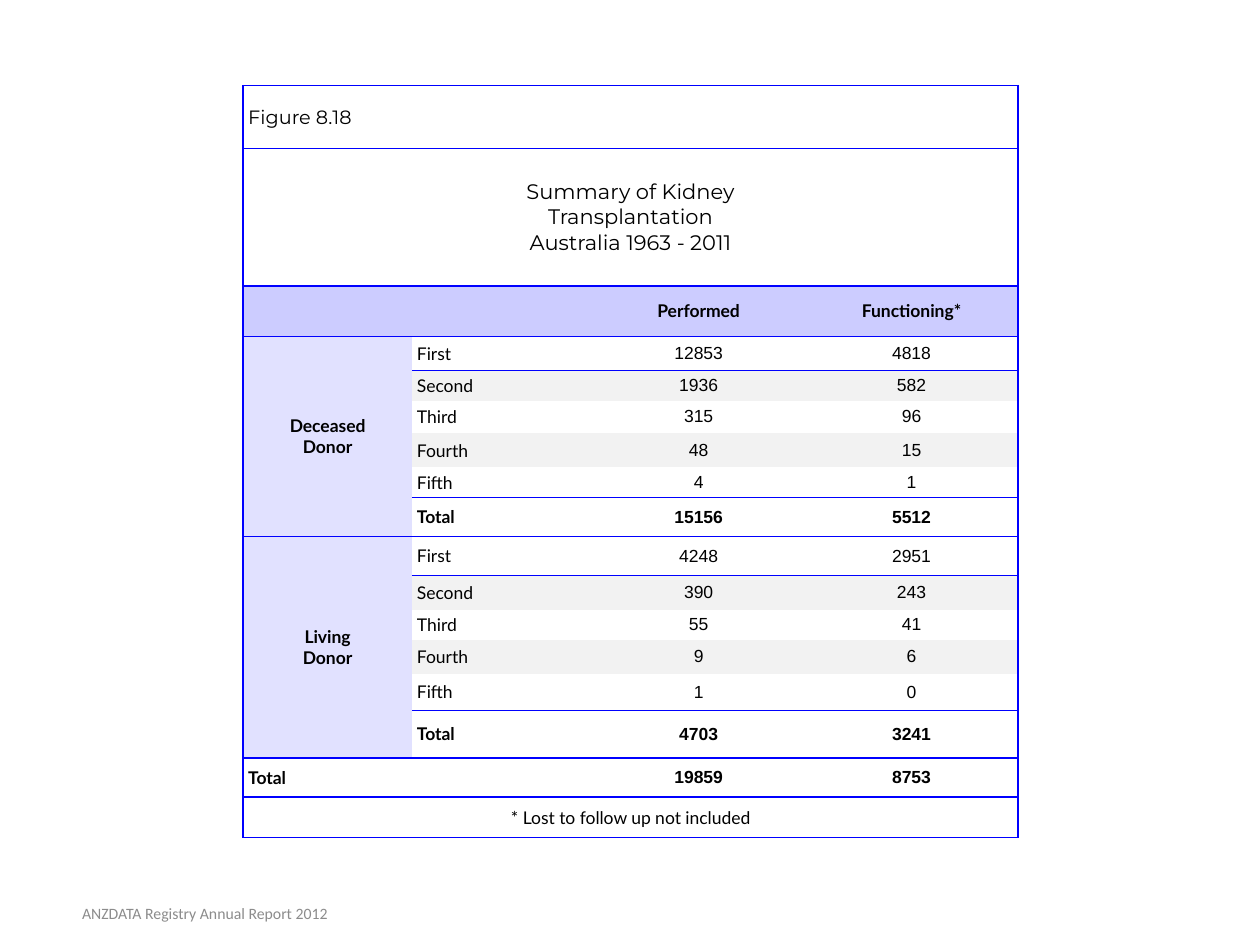
from dataclasses import dataclass
from typing import NamedTuple

from lxml.etree import SubElement
from pptx import Presentation
from pptx.dml.color import RGBColor
from pptx.enum.text import MSO_ANCHOR as Anchor, PP_ALIGN as Align
from pptx.oxml.ns import qn
from pptx.util import Inches, Pt


@dataclass(frozen=True)
class Theme:
    ink: str = "000000"
    rule: str = "0000FF"
    header: str = "CCCCFF"
    donor: str = "E1E1FF"
    band: str = "F2F2F2"
    footer: str = "8C8C8C"
    heading_font: str = "Montserrat"
    label_font: str = "Lato"
    number_font: str = "Arial"
    footer_font: str = "Calibri"
    figure_size: float = 11
    title_size: float = 12
    body_size: float = 10
    footer_size: float = 9


class Style(NamedTuple):
    font: str
    size: float
    bold: bool = False
    align: Align = Align.CENTER
    color: str = Theme.ink


class Graft(NamedTuple):
    label: str
    performed: int
    functioning: int
    height: float


class Donor(NamedTuple):
    name: str
    first_row: int
    grafts: list[Graft]


class Rule(NamedTuple):
    width: float
    first_col: int = 0


T = Theme()
LEFT, TOP = 1.93, 0.68
COLS = [1.34, 1.43, 1.69, 1.69]
FIGURE, TITLE, HEADER = 0, 1, 2
TOTAL, NOTE = 15, 16
NO_STYLE_NO_GRID = "{2D5ABB26-0587-4C30-8999-92F81FD0307C}"

DONORS = [
    Donor("Deceased\nDonor", 3, [
        Graft("First", 12853, 4818, 0.27),
        Graft("Second", 1936, 582, 0.24),
        Graft("Third", 315, 96, 0.26),
        Graft("Fourth", 48, 15, 0.27),
        Graft("Fifth", 4, 1, 0.24),
        Graft("Total", 15156, 5512, 0.31),
    ]),
    Donor("Living\nDonor", 9, [
        Graft("First", 4248, 2951, 0.31),
        Graft("Second", 390, 243, 0.27),
        Graft("Third", 55, 41, 0.24),
        Graft("Fourth", 9, 6, 0.27),
        Graft("Fifth", 1, 0, 0.29),
        Graft("Total", 4703, 3241, 0.38),
    ]),
]
HEIGHTS = [0.5, 1.09, 0.4, *(g.height for d in DONORS for g in d.grafts), 0.31, 0.32]

# Horizontal rules, keyed by the row they lie above
RULES = {row: Rule(1) for row in (0, 1, 2, 3, 9, 15, 16, 17)}
RULES |= {row: Rule(0.75, first_col=1) for row in (8, 14)}


def write(tf, text: str, style: Style) -> None:
    tf.text = text
    for p in tf.paragraphs:
        p.alignment = style.align
        for r in p.runs:
            r.font.name, r.font.size, r.font.bold = style.font, Pt(style.size), style.bold
            r.font.color.rgb = RGBColor.from_string(style.color)


def write_row(table, row: int, label_col: int, graft: Graft, bold: bool) -> None:
    label = Style(T.label_font, T.body_size, bold, Align.LEFT)
    number = Style(T.number_font, T.body_size, bold)
    write(table.cell(row, label_col).text_frame, graft.label, label)
    write(table.cell(row, 2).text_frame, str(graft.performed), number)
    write(table.cell(row, 3).text_frame, str(graft.functioning), number)


def add_border(cell, side: str, width: float) -> None:
    ln = SubElement(cell._tc.get_or_add_tcPr(), qn(f"a:ln{side}"), w=str(Pt(width)))
    fill = SubElement(ln, qn("a:solidFill"))
    SubElement(fill, qn("a:srgbClr"), val=T.rule)


def draw_borders(cell, row: int, col: int) -> None:
    """Add borders in the schema order: left, right, top, bottom."""
    if col == 0:
        add_border(cell, "L", 1)
    if col + cell.span_width == len(COLS):
        add_border(cell, "R", 1)
    for side, edge in (("T", row), ("B", row + cell.span_height)):
        rule = RULES.get(edge)
        if rule and col >= rule.first_col:
            add_border(cell, side, rule.width)


def fill_color(row: int, col: int) -> str | None:
    if row == HEADER:
        return T.header
    for donor in DONORS:
        index = row - donor.first_row
        if 0 <= index < len(donor.grafts):
            if col == 0:
                return T.donor
            return T.band if index in (1, 3) else None
    return None


def format_cell(cell, row: int, col: int) -> None:
    cell.vertical_anchor = Anchor.MIDDLE
    cell.margin_left = cell.margin_right = Inches(0.04)
    pad = {FIGURE: 0.02, HEADER: 0.04}.get(row, 0.01)
    cell.margin_top = cell.margin_bottom = Inches(pad)
    if not cell.text_frame.text:
        # Keeps an empty cell from stretching its row
        end = cell.text_frame.paragraphs[0]._p.get_or_add_endParaRPr()
        end.set("sz", str(int(T.body_size * 100)))
    draw_borders(cell, row, col)
    color = fill_color(row, col)
    if color:
        cell.fill.solid()
        cell.fill.fore_color.rgb = RGBColor.from_string(color)
    else:
        cell.fill.background()


def add_summary_table(slide) -> None:
    table = slide.shapes.add_table(
        len(HEIGHTS), len(COLS), Inches(LEFT), Inches(TOP),
        Inches(sum(COLS)), Inches(sum(HEIGHTS))).table
    table.first_row = table.horz_banding = False
    table._tbl.tblPr.find(qn("a:tableStyleId")).text = NO_STYLE_NO_GRID
    for column, width in zip(table.columns, COLS):
        column.width = Inches(width)
    for row, height in zip(table.rows, HEIGHTS):
        row.height = Inches(height)

    strong = Style(T.label_font, T.body_size, bold=True)
    full_width = {
        FIGURE: ("Figure 8.18", Style(T.heading_font, T.figure_size, align=Align.LEFT)),
        TITLE: ("Summary of Kidney\nTransplantation\nAustralia 1963 - 2011",
                Style(T.heading_font, T.title_size)),
        NOTE: ("* Lost to follow up not included", Style(T.label_font, T.body_size)),
    }
    for row, (text, style) in full_width.items():
        table.cell(row, 0).merge(table.cell(row, len(COLS) - 1))
        write(table.cell(row, 0).text_frame, text, style)
    for col, text in ((2, "Performed"), (3, "Functioning*")):
        write(table.cell(HEADER, col).text_frame, text, strong)
    for donor in DONORS:
        cell = table.cell(donor.first_row, 0)
        cell.merge(table.cell(donor.first_row + len(donor.grafts) - 1, 0))
        write(cell.text_frame, donor.name, strong)
        for row, graft in enumerate(donor.grafts, donor.first_row):
            write_row(table, row, 1, graft, bold=graft.label == "Total")
    write_row(table, TOTAL, 0, Graft("Total", 19859, 8753, HEIGHTS[TOTAL]), bold=True)

    for row in range(len(HEIGHTS)):
        for col in range(len(COLS)):
            format_cell(table.cell(row, col), row, col)


def add_footer(slide) -> None:
    sp = slide.shapes.add_textbox(Inches(0.04), Inches(7.05), Inches(3.17), Inches(0.4))
    tf = sp.text_frame
    tf.word_wrap = True
    tf.vertical_anchor = Anchor.MIDDLE
    write(tf, "ANZDATA Registry Annual Report 2012",
          Style(T.footer_font, T.footer_size, color=T.footer))


def main() -> None:
    prs = Presentation()
    prs.slide_width, prs.slide_height = Inches(10), Inches(7.5)
    slide = prs.slides.add_slide(prs.slide_layouts[6])
    add_summary_table(slide)
    add_footer(slide)
    prs.save("out.pptx")


if __name__ == "__main__":
    main()
